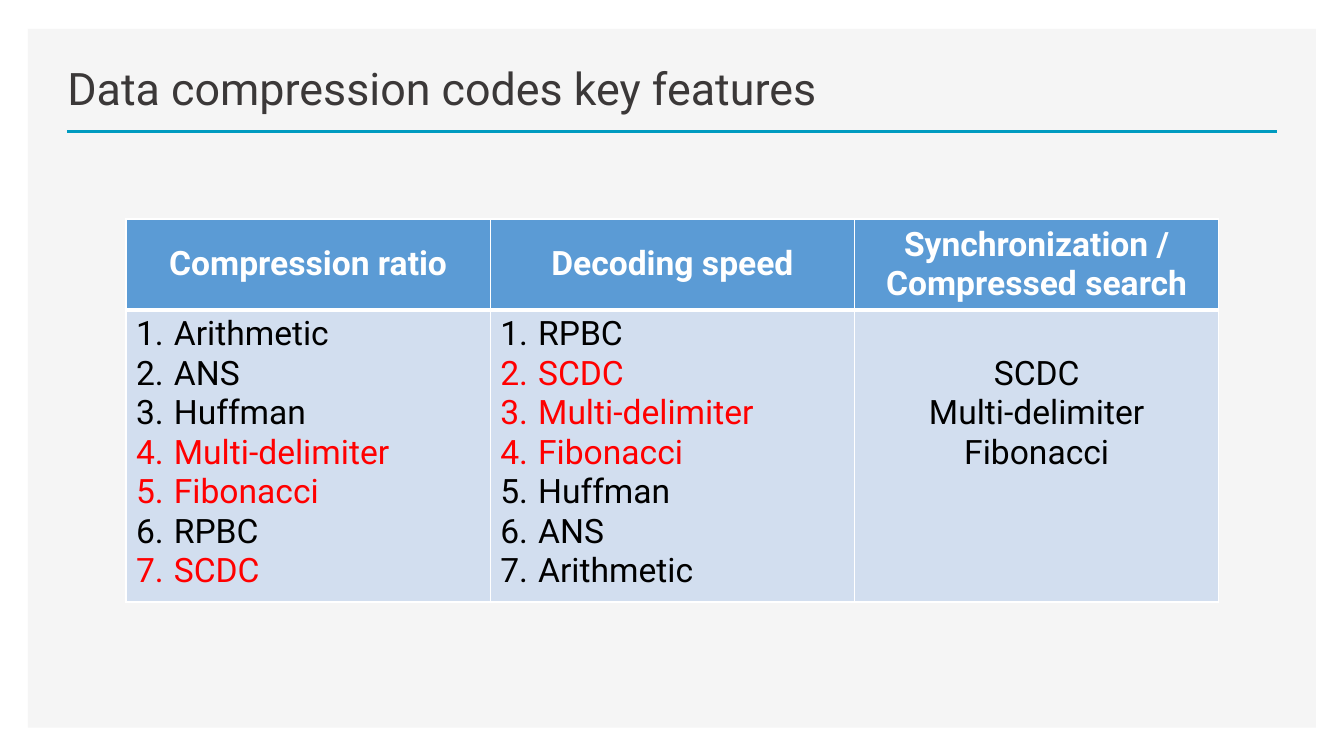
import pptx
import pptx.util
import pptx.dml.color
import pptx.enum.shapes
import pptx.enum.text
import pptx.oxml
import pptx.oxml.ns
from dataclasses import dataclass

Pt = pptx.util.Pt
Rgb = pptx.dml.color.RGBColor.from_string
Align = pptx.enum.text.PP_ALIGN
Anchor = pptx.enum.text.MSO_ANCHOR


@dataclass
class Theme:
    font: str = "Roboto"
    title_size: int = 32
    table_size: int = 24
    panel: str = "F5F5F5"
    rule: str = "009BC0"
    title: str = "3B3838"
    header: str = "5B9BD5"
    body: str = "D2DEEF"
    white: str = "FFFFFF"
    text: str = "000000"
    highlight: str = "FF0000"


theme = Theme()


def style(paragraph, size, color, bold=False):
    for run in paragraph.runs:
        run.font.name = theme.font
        run.font.size = Pt(size)
        run.font.bold = bold
        run.font.color.rgb = Rgb(color)


def finish_cell(cell, fill, top, bottom):
    cell.fill.solid()
    cell.fill.fore_color.rgb = Rgb(fill)
    properties = cell._tc.get_or_add_tcPr()
    borders = {"lnL": 1, "lnR": 1, "lnT": top, "lnB": bottom}
    for position, (side, width) in enumerate(borders.items()):
        properties.insert(position, pptx.oxml.parse_xml(
            f'<a:{side} {pptx.oxml.ns.nsdecls("a")} w="{Pt(width)}"><a:solidFill>'
            f'<a:srgbClr val="{theme.white}"/></a:solidFill></a:{side}>'))


deck = pptx.Presentation()
deck.slide_width, deck.slide_height = Pt(960), Pt(540)
slide = deck.slides.add_slide(deck.slide_layouts[6])

# Background panel
panel = slide.shapes.add_shape(
    pptx.enum.shapes.MSO_SHAPE.RECTANGLE, Pt(20), Pt(20.7), Pt(920), Pt(499))
panel.shadow.inherit = False
panel.fill.solid()
panel.fill.fore_color.rgb = Rgb(theme.panel)
panel.line.fill.background()

# Title and rule
title = slide.shapes.add_textbox(Pt(41), Pt(35.3), Pt(859), Pt(50.4))
title.text_frame.word_wrap = True
title.text_frame.vertical_anchor = Anchor.BOTTOM
title.text_frame.text = "Data compression codes key features"
style(title.text_frame.paragraphs[0], theme.title_size, theme.title)

rule = slide.shapes.add_connector(
    pptx.enum.shapes.MSO_CONNECTOR.STRAIGHT, Pt(47.8), Pt(94), Pt(912), Pt(94))
rule.line.color.rgb = Rgb(theme.rule)
rule.line.width = Pt(2)
rule._element.spPr.append(
    pptx.oxml.parse_xml(f'<a:effectLst {pptx.oxml.ns.nsdecls("a")}/>'))

# Table of codes: heading, codes, ranked or not
features = [
    ("Compression ratio", ["Arithmetic", "ANS", "Huffman", "Multi-delimiter",
                           "Fibonacci", "RPBC", "SCDC"], True),
    ("Decoding speed", ["RPBC", "SCDC", "Multi-delimiter", "Fibonacci",
                        "Huffman", "ANS", "Arithmetic"], True),
    ("Synchronization /\vCompressed search",
     ["SCDC", "Multi-delimiter", "Fibonacci"], False),
]
searchable = features[-1][1]
line_height = 28.1
indent = 27

table = slide.shapes.add_table(
    2, len(features), Pt(90), Pt(156.4), Pt(780.6), Pt(267.5)).table
table.rows[0].height = Pt(63.4)
table.rows[1].height = Pt(204.1)

for column, (heading, codes, ranked) in enumerate(features):
    table.columns[column].width = Pt(260.2)

    # Heading
    heading_cell = table.cell(0, column)
    heading_cell.vertical_anchor = Anchor.MIDDLE
    heading_line = heading_cell.text_frame.paragraphs[0]
    heading_line.text = heading
    heading_line.alignment = Align.CENTER
    style(heading_line, theme.table_size, theme.white, bold=True)
    finish_cell(heading_cell, theme.header, top=1, bottom=3)

    # Codes, with the searchable ones highlighted in the rankings
    codes_cell = table.cell(1, column)
    codes_cell.text_frame.text = "\n".join(codes)
    for code_line in codes_cell.text_frame.paragraphs:
        marked = ranked and code_line.text in searchable
        style(code_line, theme.table_size, theme.highlight if marked else theme.text)
        if ranked:
            numbering = code_line._p.get_or_add_pPr()
            numbering.set("marL", str(Pt(indent)))
            numbering.set("indent", str(-Pt(indent)))
            numbering.append(pptx.oxml.parse_xml(
                f'<a:buAutoNum {pptx.oxml.ns.nsdecls("a")} type="arabicPeriod"/>'))
        else:
            code_line.alignment = Align.CENTER
    if not ranked:
        codes_cell.margin_top = Pt(3.6 + line_height)
    finish_cell(codes_cell, theme.body, top=3, bottom=1)

deck.save("out.pptx")
